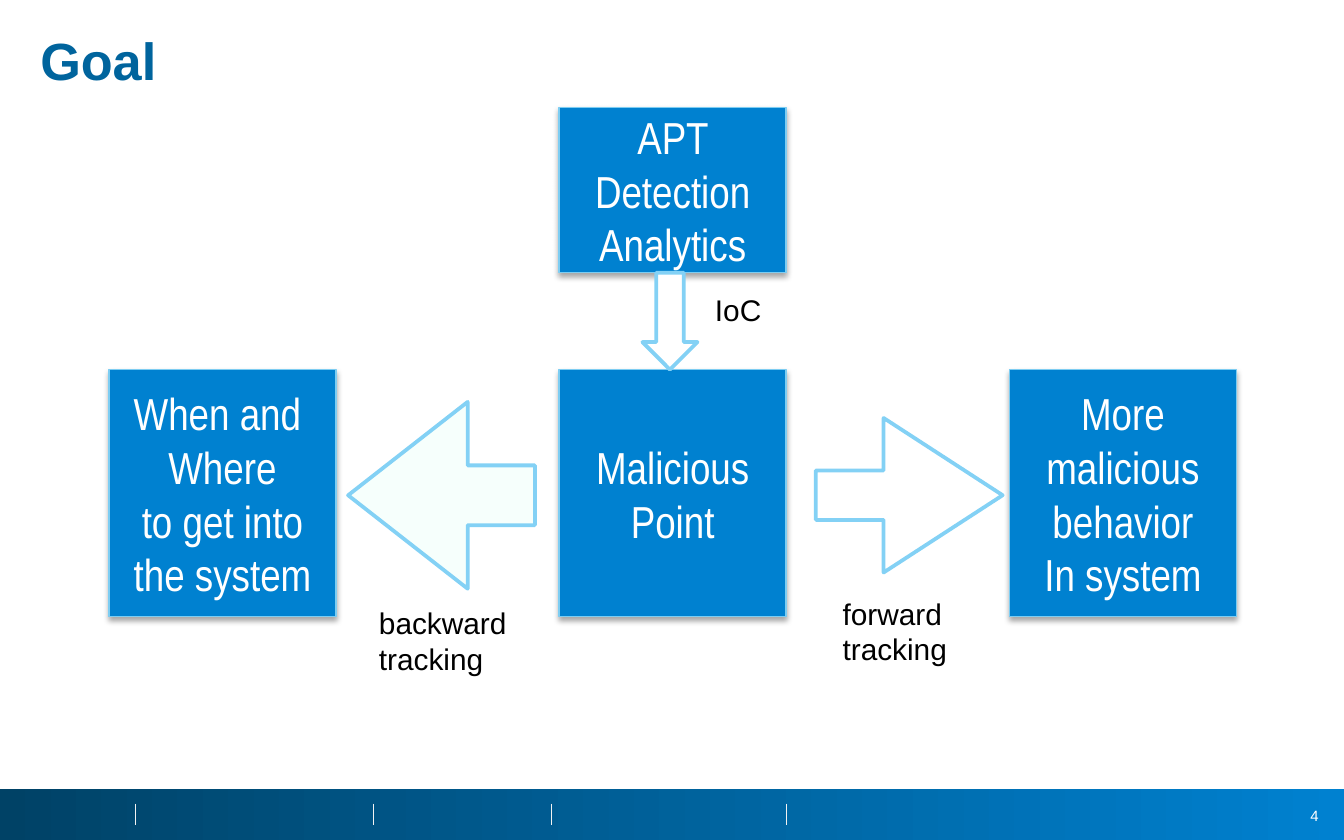
from dataclasses import dataclass
from lxml.etree import SubElement
from pptx import Presentation
from pptx.dml.color import RGBColor
from pptx.enum.shapes import MSO_CONNECTOR as Connector, MSO_SHAPE as Shape
from pptx.enum.text import MSO_ANCHOR as Anchor, PP_ALIGN as Align
from pptx.oxml.ns import qn
from pptx.util import Inches, Pt


@dataclass(frozen=True)
class Theme:
    title: str = "00649D"
    block: str = "0081D0"
    block_edge: str = "7DCDF2"
    arrow_edge: str = "83D1F5"
    mint: str = "F6FFFC"
    white: str = "FFFFFF"
    black: str = "000000"
    tick: str = "F2F2F2"
    footer_start: str = "004266"
    sans: str = "Arial"
    narrow: str = "Arial Narrow"
    title_size: int = 28
    block_size: int = 24
    label_size: int = 16
    number_size: int = 8


THEME = Theme()
WIDTH, HEIGHT = 10, 6.25
FIRST_COLUMN, COLUMN_STEP = 0.81, 3.35
BLOCK_WIDTH, BLOCK_HEIGHT = 1.69, 1.84
TOP_ROW, TOP_HEIGHT, MAIN_ROW = 0.8, 1.23, 2.75
FOOTER_HEIGHT = 0.38
INSET = 0.05

TITLE = "Goal"
PAGE_NUMBER = "4"
BLOCKS = [
    (1, TOP_ROW, TOP_HEIGHT, ["APT Detection Analytics"]),
    (0, MAIN_ROW, BLOCK_HEIGHT, ["When and ", "Where", "to get into the system"]),
    (1, MAIN_ROW, BLOCK_HEIGHT, ["Malicious", "Point"]),
    (2, MAIN_ROW, BLOCK_HEIGHT, ["More malicious behavior", "In system"]),
]
ARROWS = [
    (Shape.DOWN_ARROW, (4.78, TOP_ROW + TOP_HEIGHT, 0.41, 0.72), (0.5, 0.5), THEME.white),
    (Shape.LEFT_ARROW, (2.59, 2.99, 1.39, 1.39), (0.32, 0.64), THEME.mint),
    (Shape.RIGHT_ARROW, (6.07, 3.11, 1.39, 1.15), (0.32, 0.77), THEME.white),
]
LABELS = [
    ((5.27, 2.12, 0.5, 0.37), ["IoC"]),
    ((2.77, 4.45, 1.1, 0.64), ["backward", "tracking"]),
    ((6.22, 4.38, 1.1, 0.64), ["forward", "tracking"]),
]
FOOTER_TICKS = [1.01, 2.78, 4.1, 5.85]


def rgb(value):
    return RGBColor.from_string(value)


def inches(area):
    return [Inches(length) for length in area]


def write(box, lines, font, size, color, align=Align.LEFT, anchor=Anchor.TOP,
          inset=INSET, bold=False):
    frame = box.text_frame
    frame.word_wrap = True
    frame.vertical_anchor = anchor
    frame.margin_left = frame.margin_right = Inches(inset)
    frame.margin_top = frame.margin_bottom = Inches(INSET)
    frame.text = "\n".join(lines)
    for para in frame.paragraphs:
        para.alignment = align
        for span in para.runs:
            span.font.name = font
            span.font.size = Pt(size)
            span.font.bold = bold
            span.font.color.rgb = rgb(color)


def add_shape(page, kind, area, fill, edge, weight):
    shape = page.shapes.add_shape(kind, *inches(area))
    shape.fill.solid()
    shape.fill.fore_color.rgb = rgb(fill)
    shape.line.color.rgb = rgb(edge)
    shape.line.width = Pt(weight)
    shape.shadow.inherit = False
    return shape


def add_drop_shadow(shape):
    effects = shape.element.spPr.find(qn("a:effectLst"))
    shadow = SubElement(effects, qn("a:outerShdw"), blurRad=str(Pt(3)),
                        dist=str(Pt(1.8)), dir="5400000", rotWithShape="0")
    color = SubElement(shadow, qn("a:srgbClr"), val=THEME.black)
    SubElement(color, qn("a:alpha"), val="35000")


def add_footer(page):
    top = HEIGHT - FOOTER_HEIGHT
    bar = page.shapes.add_shape(
        Shape.RECTANGLE, *inches((0, top, WIDTH, FOOTER_HEIGHT)))
    bar.fill.gradient()
    bar.fill.gradient_angle = 0
    for stop, color, place in zip(bar.fill.gradient_stops,
                                  (THEME.footer_start, THEME.block), (0, 1)):
        stop.color.rgb = rgb(color)
        stop.position = place
    bar.line.fill.background()
    bar.shadow.inherit = False
    for left in FOOTER_TICKS:
        tick = page.shapes.add_connector(
            Connector.STRAIGHT, *inches((left, 5.98, left, 6.14)))
        tick.line.color.rgb = rgb(THEME.tick)
        tick.line.width = Pt(0.25)
        SubElement(tick.element.spPr, qn("a:effectLst"))
    number = page.shapes.add_textbox(*inches((9.49, 5.95, 0.42, 0.24)))
    write(number, [PAGE_NUMBER], THEME.sans, THEME.number_size, THEME.white,
          Align.RIGHT, Anchor.MIDDLE, inset=0.1)


def main():
    deck = Presentation()
    deck.slide_width, deck.slide_height = inches((WIDTH, HEIGHT))
    page = deck.slides.add_slide(deck.slide_layouts[5])
    add_footer(page)

    title = page.shapes.title
    title.left, title.top, title.width, title.height = inches((0.2, 0.2, 9.59, 0.54))
    write(title, [TITLE], THEME.sans, THEME.title_size, THEME.title,
          anchor=Anchor.MIDDLE, inset=0.1, bold=True)
    title.text_frame.paragraphs[0].line_spacing = 0.9

    for column, top, height, lines in BLOCKS:
        left = FIRST_COLUMN + column * COLUMN_STEP
        block = add_shape(page, Shape.RECTANGLE, (left, top, BLOCK_WIDTH, height),
                          THEME.block, THEME.block_edge, 0.75)
        add_drop_shadow(block)
        write(block, lines, THEME.narrow, THEME.block_size, THEME.white,
              Align.CENTER, Anchor.MIDDLE)

    for kind, area, adjustments, fill in ARROWS:
        arrow = add_shape(page, kind, area, fill, THEME.arrow_edge, 2)
        for index, value in enumerate(adjustments):
            arrow.adjustments[index] = value

    for area, lines in LABELS:
        label = page.shapes.add_textbox(*inches(area))
        write(label, lines, THEME.sans, THEME.label_size, THEME.black)

    deck.save("out.pptx")


if __name__ == "__main__":
    main()
